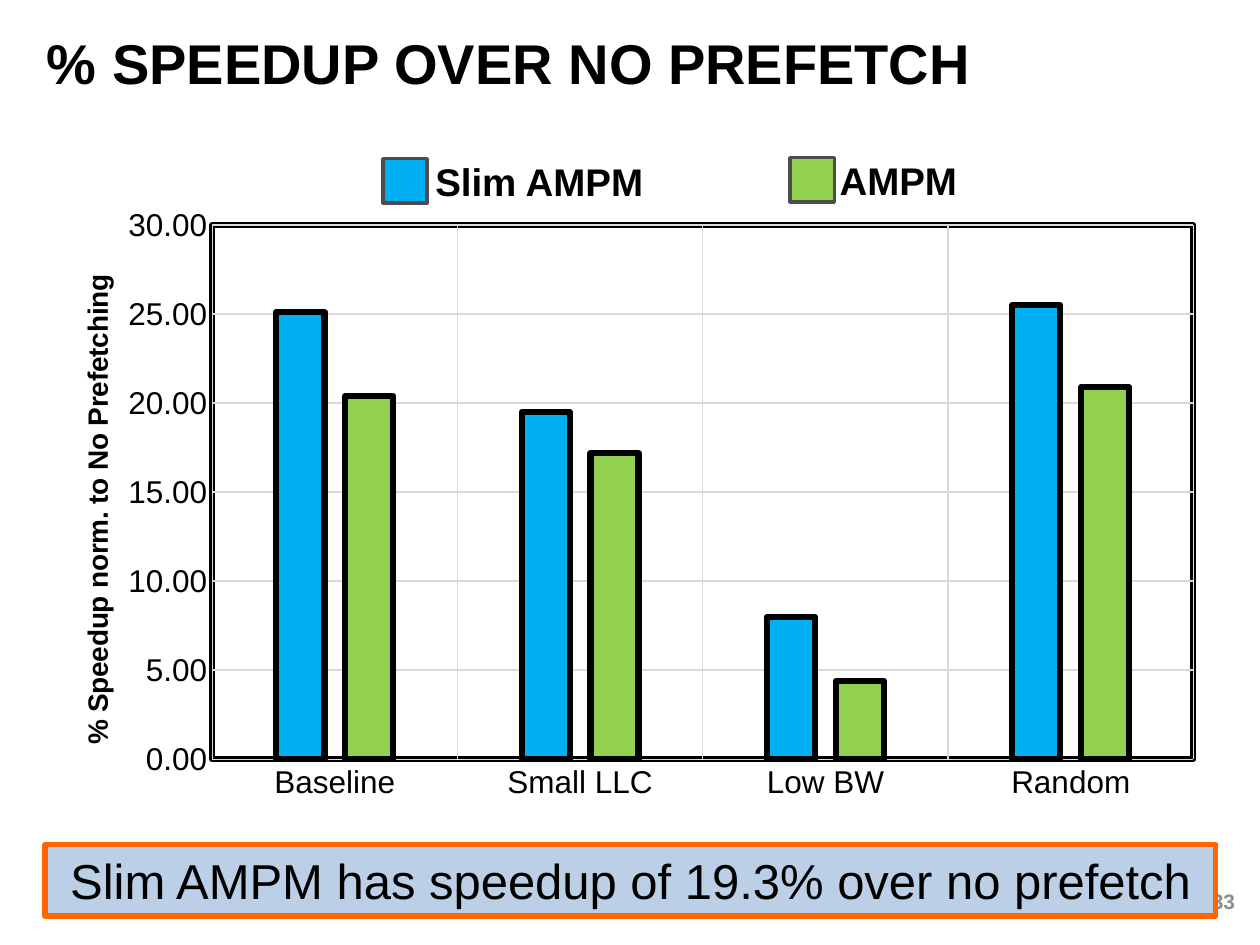
from lxml import etree
from pptx import Presentation
from pptx import util as u
from pptx.chart.data import CategoryChartData
from pptx.dml.color import RGBColor
from pptx.enum import chart as charts, shapes, text
from pptx.oxml import parse_xml
from pptx.oxml.ns import nsdecls, qn

FONT = "Arial"
COLOURS = {
    "text": "000000",
    "page_number": "8C8C8C",
    "slim": "00B0F0",
    "ampm": "92D050",
    "swatch_line": "4D4D4D",
    "grid": "D9D9D9",
    "banner": "BBCFE6",
    "banner_line": "FF6600",
    "plot": "FFFFFF",
}
CATEGORIES = ["Baseline", "Small LLC", "Low BW", "Random"]
SERIES = [
    ("Series 1", [25.1, 19.5, 8, 25.5], "slim"),
    ("Series 2", [20.4, 17.2, 4.4, 20.9], "ampm"),
]


def colour(name):
    return RGBColor.from_string(COLOURS[name])


def place(shape, box):
    shape.left, shape.top, shape.width, shape.height = (u.Cm(n) for n in box)


def write(frame, words, size, bold=False, ink="text", align=text.PP_ALIGN.LEFT):
    frame.word_wrap = True
    frame.vertical_anchor = text.MSO_ANCHOR.MIDDLE
    paragraph = frame.paragraphs[0]
    paragraph.alignment = align
    run = paragraph.add_run()
    run.text = words
    set_font(run.font, size, bold, ink)


def set_font(font, size, bold=False, ink="text"):
    font.name, font.size, font.bold = FONT, u.Pt(size), bold
    font.color.rgb = colour(ink)


def outline(line, name, width):
    line.color.rgb = colour(name)
    line.width = u.Pt(width)


def add_rectangle(parent, box, fill, line, width):
    shape = parent.shapes.add_shape(
        shapes.MSO_SHAPE.RECTANGLE, *(u.Cm(n) for n in box))
    shape.shadow.inherit = False
    shape.fill.solid()
    shape.fill.fore_color.rgb = colour(fill)
    outline(shape.line, line, width)
    return shape


def add_label(parent, box, words, size, **style):
    label = parent.shapes.add_textbox(*(u.Cm(n) for n in box))
    write(label.text_frame, words, size, **style)


def add_title(slide, box, words):
    title = slide.shapes.title
    place(title, box)
    write(title.text_frame, words, 32, bold=True)


def add_banner(slide, box, words):
    banner = add_rectangle(slide, box, "banner", "banner_line", 3)
    write(banner.text_frame, words, 28, align=text.PP_ALIGN.CENTER)
    banner.text_frame.auto_size = text.MSO_AUTO_SIZE.SHAPE_TO_FIT_TEXT


def add_legend_key(slide, box, words, fill):
    left, top, width, height = box
    inset = 0.5
    key = slide.shapes.add_group_shape()
    add_label(key, (left + inset, top + 0.04, width - inset, height - 0.06),
              words, 22, bold=True, align=text.PP_ALIGN.CENTER)
    add_rectangle(key, (left, top, height, height), fill, "swatch_line", 2)


def set_layout(parent, **values):
    """Fix the position of a chart part, as fractions of the chart."""
    layout = parent.find(qn("c:layout"))
    if layout is None:
        layout = parse_xml(f"<c:layout {nsdecls('c')}/>")
        parent.insert(0, layout)
    manual = etree.SubElement(layout, qn("c:manualLayout"))
    if "w" in values:
        etree.SubElement(manual, qn("c:layoutTarget")).set("val", "inner")
    for mode in ("xMode", "yMode"):
        etree.SubElement(manual, qn(f"c:{mode}")).set("val", "edge")
    for name, value in values.items():
        etree.SubElement(manual, qn(f"c:{name}")).set("val", str(value))


def add_speedup_chart(slide, box):
    data = CategoryChartData(number_format="0.00")
    data.categories = CATEGORIES
    for name, values, _ in SERIES:
        data.add_series(name, values)
    chart = slide.shapes.add_chart(
        charts.XL_CHART_TYPE.COLUMN_CLUSTERED,
        *(u.Cm(n) for n in box), data).chart
    chart.has_legend = False
    chart.has_title = False
    set_font(chart.font, 18)

    # Columns
    plot = chart.plots[0]
    plot.gap_width, plot.overlap = 267, -43
    plot.vary_by_categories = False
    for series, (_, _, fill) in zip(plot.series, SERIES):
        series.format.fill.solid()
        series.format.fill.fore_color.rgb = colour(fill)
        outline(series.format.line, "text", 3.5)

    # Axes and grid
    value_axis, category_axis = chart.value_axis, chart.category_axis
    for axis in (value_axis, category_axis):
        axis.major_tick_mark = axis.minor_tick_mark = charts.XL_TICK_MARK.NONE
        axis.has_major_gridlines = True
        outline(axis.major_gridlines.format.line, "grid", 0.75)
    outline(category_axis.format.line, "grid", 0.75)
    value_axis.format.line.fill.background()
    value_axis.minimum_scale, value_axis.maximum_scale = 0, 30
    value_axis.major_unit = 5
    value_axis.tick_labels.number_format = "0.00"
    value_axis.tick_labels.number_format_is_linked = False

    # Value axis title, turned to read upwards
    axis_title = value_axis.axis_title
    frame = axis_title.text_frame
    run = frame.paragraphs[0].add_run()
    run.text = "% Speedup norm. to No Prefetching"
    set_font(run.font, 16, bold=True)
    for body in axis_title.element.iter(qn("a:bodyPr")):
        body.set("rot", "-5400000")
        body.set("vert", "horz")
    set_layout(axis_title.element, x=0.03, y=0.12)

    # Plot area with a heavy frame
    plot_area = chart.element.find(".//" + qn("c:plotArea"))
    set_layout(plot_area, x=0.147, y=0.048, w=0.834, h=0.865)
    plot_area.append(parse_xml(
        f"<c:spPr {nsdecls('c', 'a')}>"
        f"<a:solidFill><a:srgbClr val=\"{COLOURS['plot']}\"/></a:solidFill>"
        f"<a:ln w=\"{u.Pt(3.5)}\"><a:solidFill>"
        f"<a:srgbClr val=\"{COLOURS['text']}\"/></a:solidFill></a:ln></c:spPr>"))


def main():
    presentation = Presentation()
    presentation.slide_width, presentation.slide_height = u.Cm(25.4), u.Cm(19.05)
    slide = presentation.slides.add_slide(presentation.slide_layouts[5])

    add_title(slide, (0.69, 0.56, 24.71, 1.37), "% SPEEDUP OVER NO PREFETCH")
    add_label(slide, (19.23, 17.65, 5.92, 1.02), "33", 12, bold=True,
              ink="page_number", align=text.PP_ALIGN.RIGHT)
    add_banner(slide, (0.91, 17.02, 23.6, 1.45),
               "Slim AMPM has speedup of 19.3% over no prefetch")
    add_speedup_chart(slide, (0.79, 3.94, 23.72, 12.45))
    add_legend_key(slide, (15.93, 3.18, 3.86, 0.89), "AMPM", "ampm")
    add_legend_key(slide, (7.72, 3.2, 5.8, 0.89), "Slim AMPM", "slim")

    presentation.save("out.pptx")


if __name__ == "__main__":
    main()
